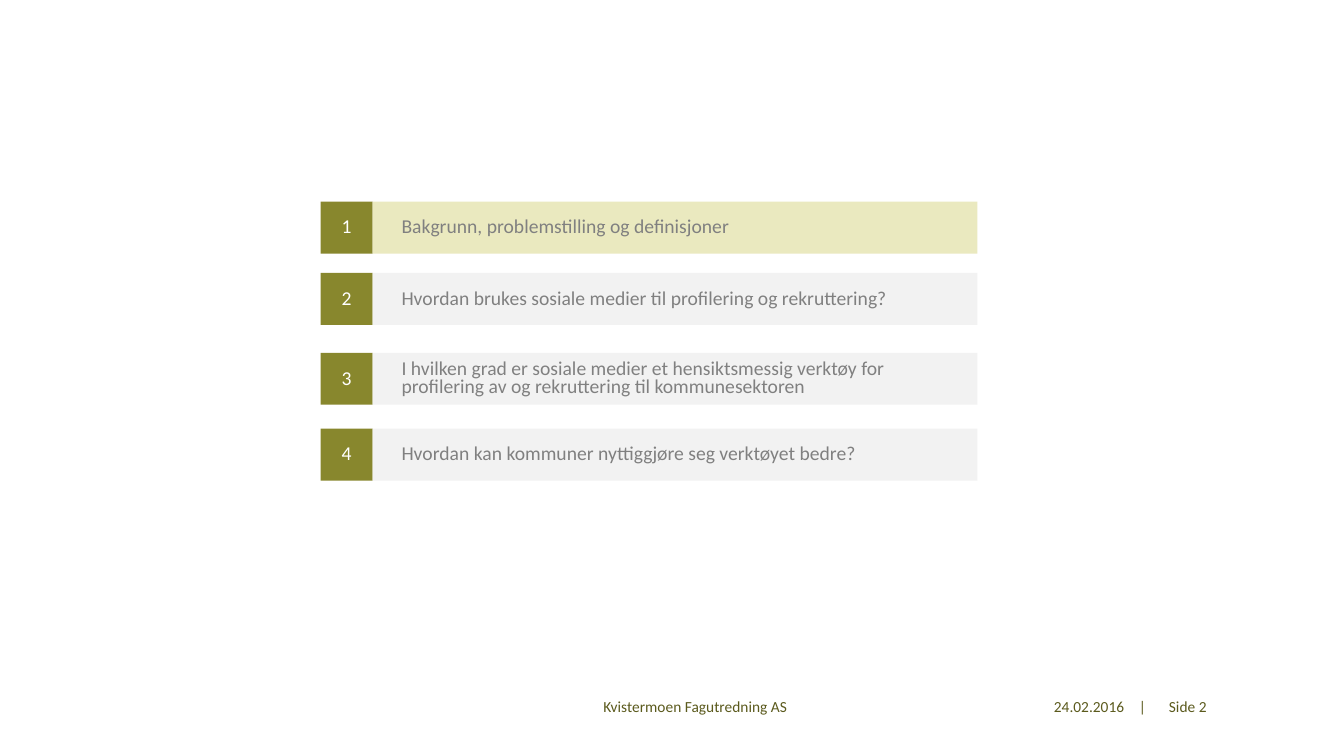
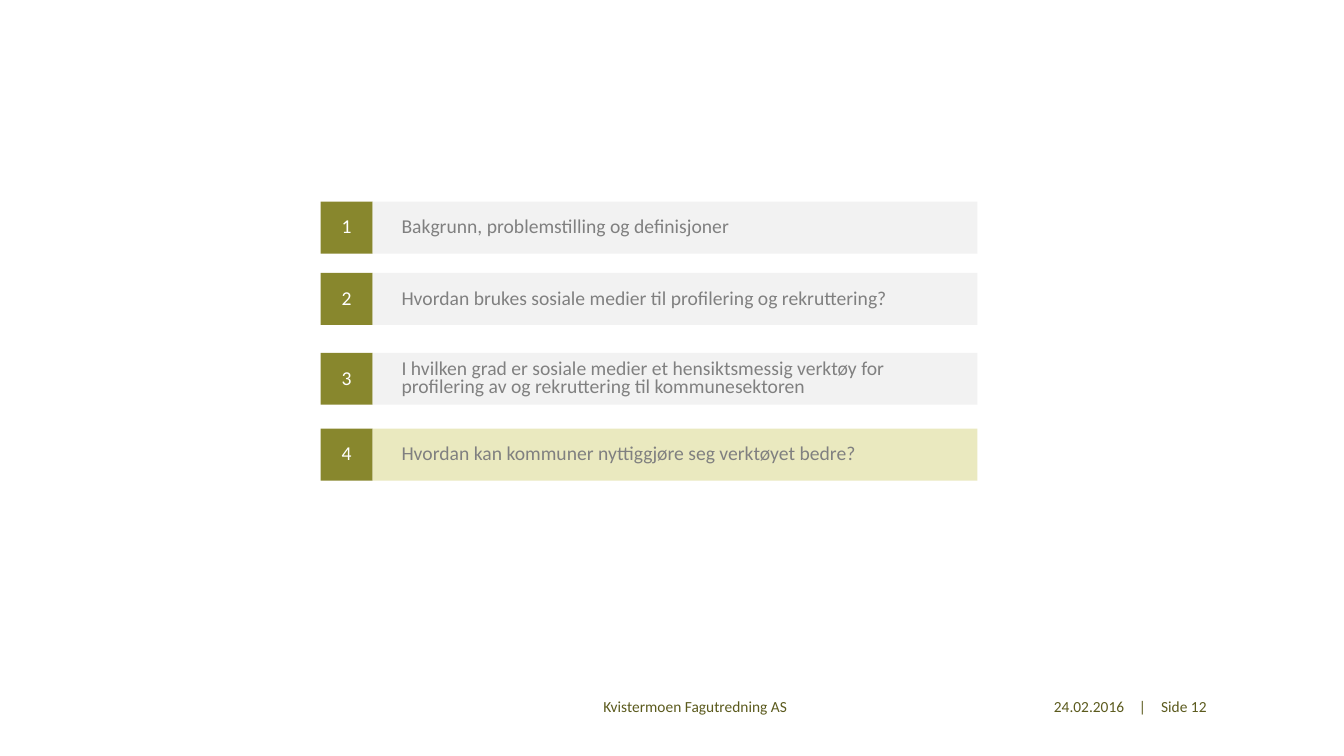
from dataclasses import dataclass

from lxml.etree import SubElement
from pptx import Presentation
from pptx.dml.color import RGBColor
from pptx.enum.shapes import MSO_SHAPE
from pptx.enum.text import MSO_ANCHOR, PP_ALIGN
from pptx.oxml.ns import qn
from pptx.slide import Slide
from pptx.text.text import TextFrame, _Paragraph
from pptx.util import Cm, Pt


@dataclass(frozen=True)
class Theme:
    """Colours, font and type sizes of the deck."""
    face: str = "Calibri"
    olive: RGBColor = RGBColor(0x88, 0x87, 0x2D)
    pale: RGBColor = RGBColor(0xEA, 0xE9, 0xBF)
    light: RGBColor = RGBColor(0xF2, 0xF2, 0xF2)
    grey: RGBColor = RGBColor(0x80, 0x80, 0x80)
    white: RGBColor = RGBColor(0xFF, 0xFF, 0xFF)
    dark: RGBColor = RGBColor(0x5B, 0x5A, 0x1D)
    body: int = 14
    small: int = 11


@dataclass(frozen=True)
class Topic:
    """One agenda row: its top in cm, wording and line spacing."""
    top: float
    text: str
    pitch: float = 0.9


@dataclass(frozen=True)
class Page:
    """An agenda slide: the current topic and the page number."""
    active: int
    number: int


THEME = Theme()
LEFT, SIDE, WIDTH = 8.08, 1.31, 15.24
TOPICS = (
    Topic(5.08, "Bakgrunn, problemstilling og definisjoner"),
    Topic(6.88, "Hvordan brukes sosiale medier til profilering og rekruttering?"),
    Topic(8.89, "I hvilken grad er sosiale medier et hensiktsmessig verktøy for "
          "profilering av og rekruttering til kommunesektoren", 0.8),
    Topic(10.8, "Hvordan kan kommuner nyttiggjøre seg verktøyet bedre?"),
)
PAGES = (Page(1, 2), Page(4, 12))


def write(frame: TextFrame, text: str, size: int, color: RGBColor,
          align: PP_ALIGN) -> _Paragraph:
    """Fill a frame with one styled paragraph, centred in height."""
    frame.word_wrap = True
    frame.vertical_anchor = MSO_ANCHOR.MIDDLE
    para = frame.paragraphs[0]
    para.text = text
    para.alignment = align
    para.font.name = THEME.face
    para.font.size = Pt(size)
    para.font.color.rgb = color
    return para


def add_box(slide: Slide, left: float, top: float, width: float, fill: RGBColor,
            text: str, color: RGBColor, align: PP_ALIGN, pitch: float) -> _Paragraph:
    """Draw a flat filled box with its text."""
    box = slide.shapes.add_shape(MSO_SHAPE.RECTANGLE, Cm(left), Cm(top),
                                 Cm(width), Cm(SIDE))
    box.shadow.inherit = False
    box.fill.solid()
    box.fill.fore_color.rgb = fill
    box.line.fill.background()
    para = write(box.text_frame, text, THEME.body, color, align)
    para.line_spacing = pitch
    return para


def add_row(slide: Slide, topic: Topic, number: int, active: bool) -> None:
    """Draw a numbered square and the bar beside it."""
    add_box(slide, LEFT, topic.top, SIDE, THEME.olive, str(number),
            THEME.white, PP_ALIGN.CENTER, 0.9)
    fill = THEME.pale if active else THEME.light
    para = add_box(slide, LEFT + SIDE, topic.top, WIDTH, fill, topic.text,
                   THEME.grey, PP_ALIGN.LEFT, topic.pitch)
    para._p.get_or_add_pPr().set("marL", str(Cm(0.48)))


def add_note(slide: Slide, left: float, width: float, text: str,
             align: PP_ALIGN, tab: float = 0) -> None:
    """Place one footer text, with a tab stop if given."""
    box = slide.shapes.add_textbox(Cm(left), Cm(17.3), Cm(width), Cm(1.01))
    if tab:
        props = box.text_frame.paragraphs[0]._p.get_or_add_pPr()
        stops = SubElement(props, qn("a:tabLst"))
        SubElement(stops, qn("a:tab"), pos=str(Cm(tab)), algn="l")
    write(box.text_frame, text, THEME.small, THEME.dark, align)


def add_foot(slide: Slide, number: int) -> None:
    """Draw the footer shared by all slides."""
    add_note(slide, 10.97, 13.11, "Kvistermoen Fagutredning AS", PP_ALIGN.CENTER)
    add_note(slide, 26.31, 3.35, "24.02.2016\t|", PP_ALIGN.LEFT, 2.14)
    add_note(slide, 28.17, 2.49, f"Side {number}", PP_ALIGN.RIGHT)


def main() -> None:
    """Build and save the deck."""
    deck = Presentation()
    deck.slide_width, deck.slide_height = Cm(33.87), Cm(19.05)
    for page in PAGES:
        slide = deck.slides.add_slide(deck.slide_layouts[6])
        add_foot(slide, page.number)
        for number, topic in enumerate(TOPICS, 1):
            add_row(slide, topic, number, number == page.active)
    deck.save("out.pptx")


if __name__ == "__main__":
    main()
